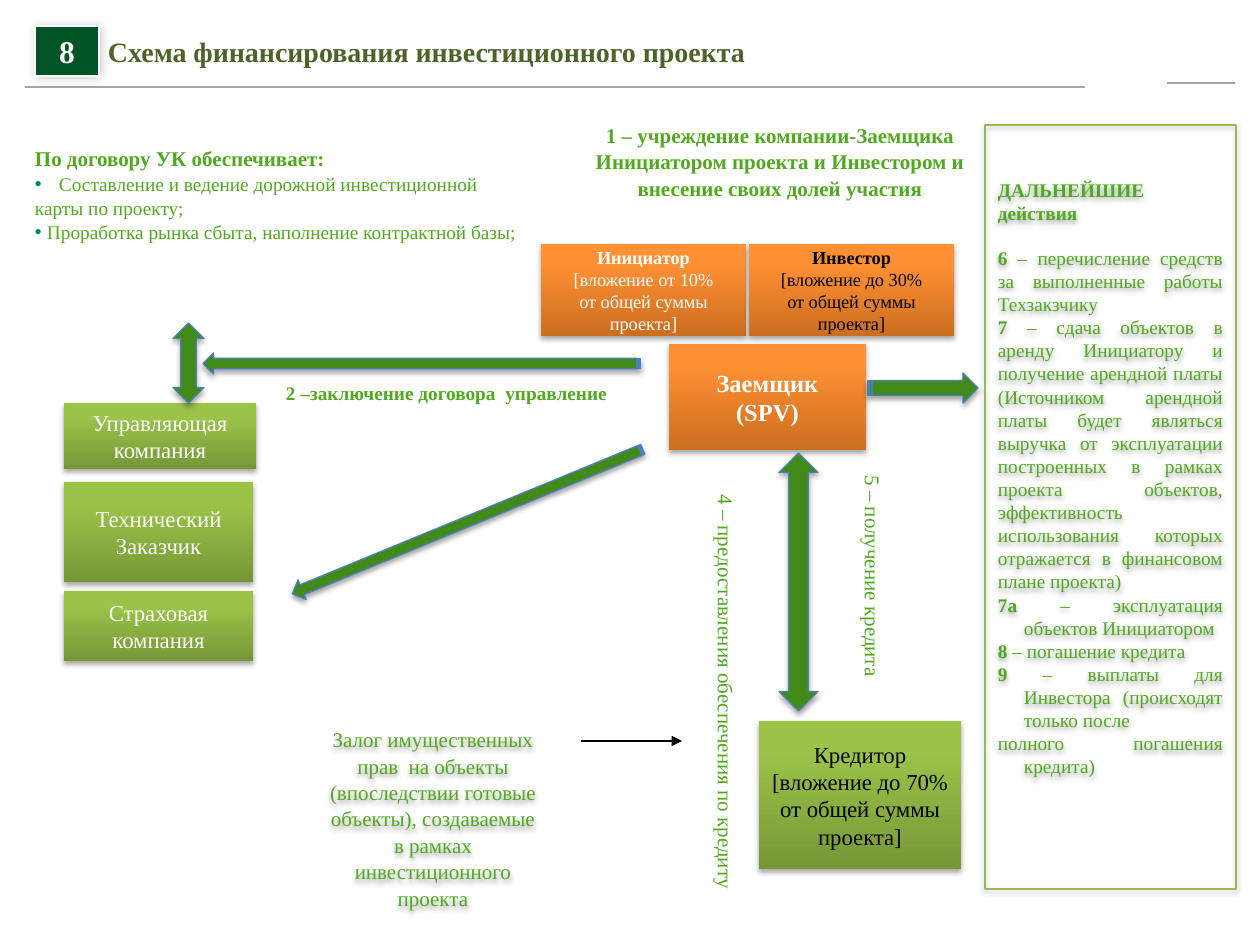
from lxml import etree
from pptx import Presentation
from pptx import util as u
from pptx.dml.color import RGBColor
from pptx.enum import shapes, text
from pptx.oxml import ns

SCALE = 914400 / 126  # EMU in one px
FONT = "Times New Roman"
WHITE = RGBColor(0xFF, 0xFF, 0xFF)
BLACK = RGBColor(0, 0, 0)
GREY = RGBColor(0xA6, 0xA6, 0xA6)
TITLE_GREEN = RGBColor(0x4F, 0x62, 0x28)
BADGE_GREEN = RGBColor(0x00, 0x54, 0x26)
TEXT_GREEN = RGBColor(0x50, 0xAA, 0x1E)
ARROW_GREEN = RGBColor(0x41, 0x8A, 0x18)
ARROW_EDGE = RGBColor(0x4B, 0x7E, 0xBC)
PANEL_EDGE = RGBColor(0x98, 0xB9, 0x55)
ORANGE = (RGBColor(0xCC, 0x6E, 0x20), RGBColor(0xFF, 0x90, 0x34))
GREEN = (RGBColor(0x77, 0x97, 0x37), RGBColor(0x9B, 0xC3, 0x48))
LEFT, CENTER, JUSTIFY = (text.PP_ALIGN.LEFT, text.PP_ALIGN.CENTER,
                         text.PP_ALIGN.JUSTIFY)
TOP, MIDDLE = text.MSO_ANCHOR.TOP, text.MSO_ANCHOR.MIDDLE
KIND = shapes.MSO_SHAPE


def px(*lengths):
    return [u.Emu(round(length * SCALE)) for length in lengths]


def write(shape, lines, size, color, bold=False, align=CENTER, anchor=MIDDLE,
          insets=(13, 6, 13, 6), spacing=1.0):
    """Fill a shape with one paragraph per line, all in the same format."""
    frame = shape.text_frame
    frame.text = "\n".join(lines)
    frame.word_wrap = True
    frame.auto_size = text.MSO_AUTO_SIZE.NONE
    frame.vertical_anchor = anchor
    (frame.margin_left, frame.margin_top,
     frame.margin_right, frame.margin_bottom) = px(*insets)
    for para in frame.paragraphs:
        para.alignment = align
        para.line_spacing = spacing
        para.space_before = u.Pt(0)
        for span in para.runs:
            span.font.name = FONT
            span.font.size = u.Pt(size)
            span.font.bold = bold
            span.font.color.rgb = color
    return frame.paragraphs


deck = Presentation()
deck.slide_width, deck.slide_height = px(1260, 945)
page = deck.slides.add_slide(deck.slide_layouts[1])
shadowed = []

# Header
title = page.shapes.title
title.left, title.top, title.width, title.height = px(108, 26, 1047, 50)
write(title, ["Схема финансирования инвестиционного проекта"], 16, TITLE_GREEN,
      True, LEFT, insets=(0, 0, 0, 0))
badge = page.shapes.add_shape(KIND.RECTANGLE, *px(35, 26, 64, 50))
badge.shadow.inherit = False
badge.fill.solid()
badge.fill.fore_color.rgb = BADGE_GREEN
badge.line.color.rgb = WHITE
badge.line.width = u.Pt(0.75)
write(badge, ["8"], 18, WHITE, True)
shadowed.append((badge, 20, 6, 1, 45))

# Rules under the header and the pledge arrow
lines = []
for ends, color in (((25, 87, 1085, 87), GREY), ((1167, 83, 1235, 83), GREY),
                    ((581, 741, 682, 741), BLACK)):
    line = page.shapes.add_connector(shapes.MSO_CONNECTOR.STRAIGHT, *px(*ends))
    line.line.color.rgb = color
    line.line.width = u.Pt(1)
    etree.SubElement(line._element.spPr, ns.qn("a:effectLst"))
    lines.append(line)
pledge_arrow = lines[-1]
etree.SubElement(pledge_arrow.line._get_or_add_ln(), ns.qn("a:tailEnd"),
                 type="triangle")

# Duties of the managing company
duties = page.placeholders[1]
duties.left, duties.top, duties.width, duties.height = px(15, 106, 506, 159)
duty_paras = write(duties, [
    "По договору УК обеспечивает:",
    "Составление и ведение дорожной инвестиционной",
    "карты по проекту;",
    "Проработка рынка сбыта, наполнение контрактной базы;",
], 11, TEXT_GREEN, align=LEFT, anchor=TOP, insets=(20, 39, 0, 0), spacing=1.04)
for para, hang in zip(duty_paras, (0, 24, 0, 12)):
    props = para._p.get_or_add_pPr()
    props.set("marL", str(px(hang)[0]))
    props.set("indent", str(px(-hang)[0]))
    if hang:
        tint = etree.SubElement(props, ns.qn("a:buClr"))
        etree.SubElement(tint, ns.qn("a:srgbClr"), val="008A53")
        etree.SubElement(props, ns.qn("a:buChar"), char="•")
    else:
        etree.SubElement(props, ns.qn("a:buNone"))
heading = duty_paras[0].runs[0].font
heading.size, heading.bold = u.Pt(12), True

# Participants
for place, colors, ink, size, bold, words in (
    ((669, 344, 197, 106), ORANGE, WHITE, 14, True, ["Заемщик", "(SPV)"]),
    ((541, 244, 205, 92), ORANGE, WHITE, 10.5, False,
     ["Инициатор", "[вложение от 10%", "от общей суммы проекта]"]),
    ((749, 244, 205, 92), ORANGE, BLACK, 10.5, False,
     ["Инвестор", "[вложение до 30%", "от общей суммы проекта]"]),
    ((64, 403, 192, 66), GREEN, WHITE, 13, False, ["Управляющая компания"]),
    ((64, 482, 189, 100), GREEN, WHITE, 13, False, ["Технический Заказчик"]),
    ((64, 591, 189, 70), GREEN, WHITE, 13, False, ["Страховая компания"]),
    ((759, 721, 202, 148), GREEN, BLACK, 13, False,
     ["Кредитор", "[вложение до 70%", "от общей суммы проекта]"]),
):
    box = page.shapes.add_shape(KIND.RECTANGLE, *px(*place))
    box.shadow.inherit = False
    box.line.fill.background()
    box.fill.gradient()
    box.fill.gradient_angle = 90
    for stop, color, position in zip(box.fill.gradient_stops, colors, (0, 0.8)):
        stop.color.rgb = color
        stop.position = position
    paras = write(box, words, size, ink, bold)
    if size == 10.5:
        paras[0].runs[0].font.bold = True
    shadowed.append((box, 35, 3.1, 1.8, 90))

# Block arrows
for kind, place, turn in (
    (KIND.STRIPED_RIGHT_ARROW, (203, 353, 437, 21), 180),
    (KIND.STRIPED_RIGHT_ARROW, (278, 511, 379, 21), 157.6),
    (KIND.STRIPED_RIGHT_ARROW, (868, 373, 110, 30), 0),
    (KIND.UP_DOWN_ARROW, (173, 323, 31, 80), 0),
    (KIND.UP_DOWN_ARROW, (779, 453, 39, 258), 0),
):
    arrow = page.shapes.add_shape(kind, *px(*place))
    arrow.rotation = turn
    arrow.shadow.inherit = False
    arrow.fill.solid()
    arrow.fill.fore_color.rgb = ARROW_GREEN
    arrow.line.color.rgb = ARROW_EDGE
    arrow.line.width = u.Pt(0.75)
    shadowed.append((arrow, 35, 3.1, 1.8, 90))

# Labels of the steps
for place, turn, size, bold, align, spacing, words in (
    ((570, 116, 420, 90), 0, 12, True, CENTER, 1.05,
     ["1 – учреждение компании-Заемщика", "Инициатором проекта и Инвестором и",
      "внесение своих долей участия"]),
    ((273, 373, 367, 39), 0, 11, True, LEFT, 1,
     ["2 –заключение договора  управление"]),
    ((507, 667, 436, 49), 90, 12, False, CENTER, 0.95,
     ["4 – предоставления обеспечения по кредиту"]),
    ((748, 552, 248, 69), 90, 12, False, LEFT, 0.95,
     ["5 – получение кредита"]),
    ((312, 711, 242, 214), 0, 12, False, CENTER, 1.05,
     ["Залог имущественных прав  на объекты (впоследствии готовые объекты), "
      "создаваемые в рамках инвестиционного проекта"]),
):
    label = page.shapes.add_textbox(*px(*place))
    label.rotation = turn
    write(label, words, size, TEXT_GREEN, bold, align, spacing=spacing)
pledge = label
shadowed.append((pledge, 38, 3.1, 1.6, 90))

# Panel of further steps: bold lead, rest of the line, hanging indent
steps = (
    ("ДАЛЬНЕЙШИЕ действия", "", 0),
    ("6", " – перечисление средств за выполненные работы Техзакзчику", 0),
    ("7", " – сдача объектов в аренду Инициатору и получение арендной платы "
     "(Источником арендной платы будет являться выручка от эксплуатации "
     "построенных в рамках проекта объектов, эффективность использования "
     "которых отражается в финансовом плане проекта)", 0),
    ("7а", " – эксплуатация объектов Инициатором", 26),
    ("8", " – погашение кредита", 26),
    ("9", " – выплаты для Инвестора (происходят только после", 26),
    ("", "полного погашения кредита)", 26),
)
panel = page.shapes.add_shape(KIND.RECTANGLE, *px(985, 125, 251, 764))
panel.shadow.inherit = False
panel.fill.background()
panel.line.color.rgb = PANEL_EDGE
panel.line.width = u.Pt(0.75)
step_paras = write(panel, [lead or rest for lead, rest, hang in steps], 11,
                   TEXT_GREEN, True, JUSTIFY, TOP, (13, 53, 13, 6))
for para, (lead, rest, hang) in zip(step_paras, steps):
    props = para._p.get_or_add_pPr()
    props.set("marL", str(px(hang)[0]))
    props.set("indent", str(px(-hang)[0]))
    if not lead:
        para.runs[0].font.bold = False
    elif rest:
        span = para.add_run()
        span.text = rest
        span.font.name, span.font.size = FONT, u.Pt(11)
        span.font.bold = False
        span.font.color.rgb = TEXT_GREEN
step_paras[1].space_before = u.Pt(12.5)
shadowed.append((panel, 38, 3.1, 1.6, 90))

# Soft shadows: opacity in percent, blur and distance in points, angle
for shape, opacity, blur, distance, angle in shadowed:
    shape.shadow.inherit = False
    effects = shape._element.spPr.find(ns.qn("a:effectLst"))
    shade = etree.SubElement(
        effects, ns.qn("a:outerShdw"), blurRad=str(u.Pt(blur)),
        dist=str(u.Pt(distance)), dir=str(angle * 60000), rotWithShape="0")
    tone = etree.SubElement(shade, ns.qn("a:srgbClr"), val="000000")
    etree.SubElement(tone, ns.qn("a:alpha"), val=str(opacity * 1000))

deck.save("out.pptx")
